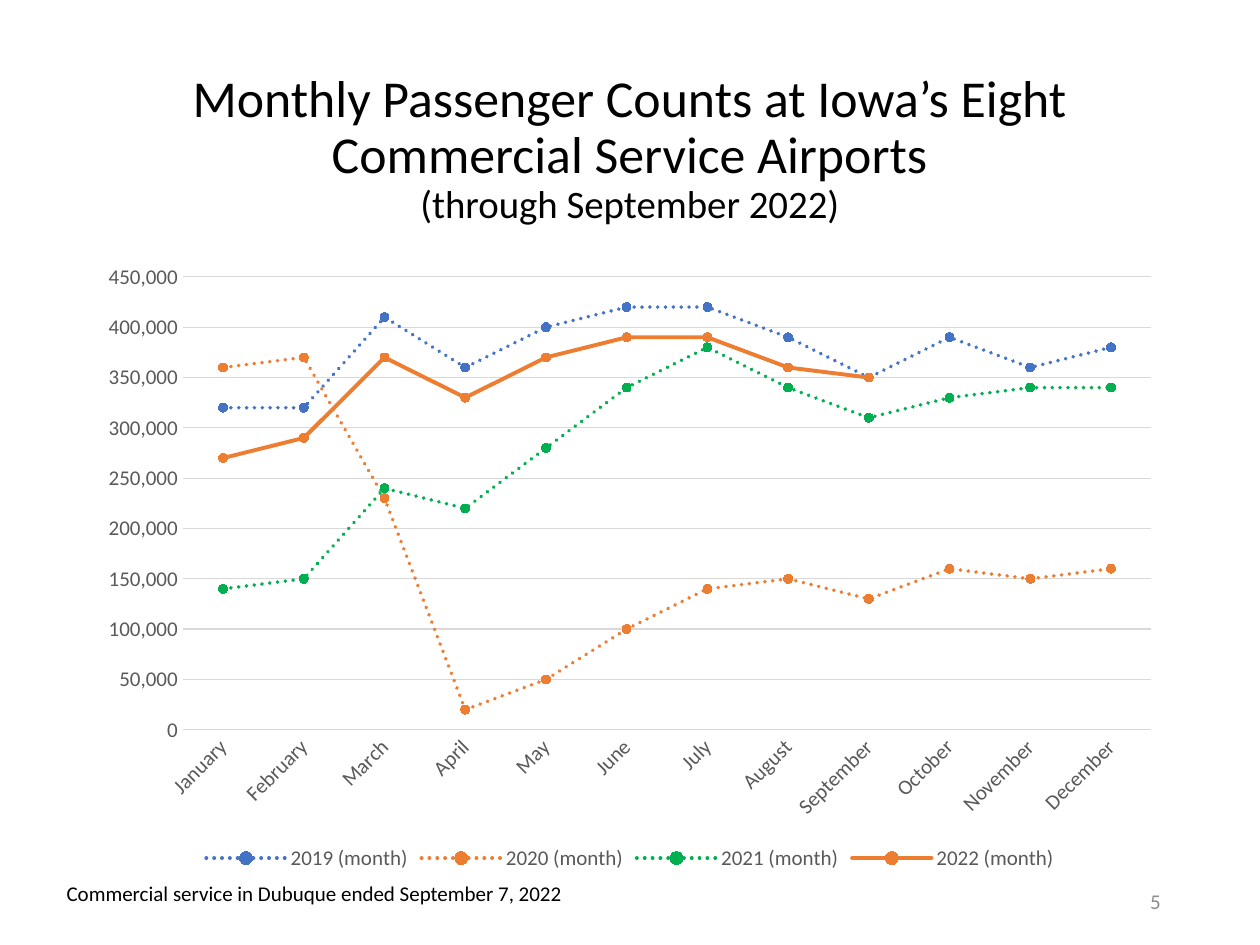
from dataclasses import dataclass
from typing import Optional

from pptx import Presentation
from pptx.chart.data import CategoryChartData
from pptx.dml.color import RGBColor
from pptx.enum.chart import XL_CHART_TYPE, XL_LEGEND_POSITION, XL_MARKER_STYLE, XL_TICK_MARK
from pptx.enum.dml import MSO_LINE
from pptx.enum.text import MSO_ANCHOR, PP_ALIGN
from pptx.oxml.ns import qn
from pptx.util import Inches, Pt


@dataclass(frozen=True)
class Theme:
    font: str = "Calibri"
    ink: str = "000000"
    label: str = "595959"
    grid: str = "D9D9D9"
    muted: str = "8C8C8C"
    blue: str = "4472C4"
    orange: str = "ED7D31"
    green: str = "00B050"
    title: float = 29.6
    sub: float = 22.2
    small: float = 12
    base: float = 10


@dataclass(frozen=True)
class Year:
    name: str
    color: str
    counts: tuple[Optional[int], ...]
    dotted: bool = True


@dataclass(frozen=True)
class Line:
    text: str
    size: float
    color: str


@dataclass(frozen=True)
class Note:
    box: tuple[float, float, float, float]
    lines: tuple[Line, ...]
    align: PP_ALIGN = PP_ALIGN.LEFT
    anchor: MSO_ANCHOR = MSO_ANCHOR.TOP
    spacing: float = 1.0


THEME = Theme()
UNIT = 10000
MONTHS = ("January", "February", "March", "April", "May", "June", "July",
          "August", "September", "October", "November", "December")
YEARS = (
    Year("2019 (month)", THEME.blue,
         (32, 32, 41, 36, 40, 42, 42, 39, 35, 39, 36, 38)),
    Year("2020 (month)", THEME.orange,
         (36, 37, 23, 2, 5, 10, 14, 15, 13, 16, 15, 16)),
    Year("2021 (month)", THEME.green,
         (14, 15, 24, 22, 28, 34, 38, 34, 31, 33, 34, 34)),
    Year("2022 (month)", THEME.orange,
         (27, 29, 37, 33, 37, 39, 39, 36, 35, None, None, None), False),
)
NOTES = (
    Note((7.06, 6.95, 2.25, 0.4), (Line("5", THEME.small, THEME.muted),),
         PP_ALIGN.RIGHT, MSO_ANCHOR.MIDDLE),
    Note((0.69, 0.4, 8.62, 1.45),
         (Line("Monthly Passenger Counts at Iowa’s Eight Commercial Service Airports",
               THEME.title, THEME.ink),
          Line("(through September 2022)", THEME.sub, THEME.ink)),
         PP_ALIGN.CENTER, MSO_ANCHOR.BOTTOM, 0.9),
    Note((0.43, 6.94, 7.02, 0.3),
         (Line("Commercial service in Dubuque ended September 7, 2022",
               THEME.small, THEME.ink),)),
)


def set_font(font, size: float, color: str) -> None:
    font.name = THEME.font
    font.size = Pt(size)
    font.color.rgb = RGBColor.from_string(color)


def set_line(line, color: str, width: float) -> None:
    line.color.rgb = RGBColor.from_string(color)
    line.width = Pt(width)


def add_note(slide, note: Note) -> None:
    frame = slide.shapes.add_textbox(*map(Inches, note.box)).text_frame
    frame.word_wrap = True
    frame.vertical_anchor = note.anchor
    frame.text = "\n".join(line.text for line in note.lines)
    for para, line in zip(frame.paragraphs, note.lines):
        para.alignment = note.align
        para.line_spacing = note.spacing
        set_font(para.runs[0].font, line.size, line.color)


def style_year(series, year: Year) -> None:
    series.smooth = False
    set_line(series.format.line, year.color, 2.25)
    if year.dotted:
        series.format.line.dash_style = MSO_LINE.ROUND_DOT
    series._element.find(f"{qn('c:spPr')}/{qn('a:ln')}").set("cap", "rnd")
    marker = series.marker
    marker.style = XL_MARKER_STYLE.CIRCLE
    marker.size = 5
    marker.format.fill.solid()
    marker.format.fill.fore_color.rgb = RGBColor.from_string(year.color)
    set_line(marker.format.line, year.color, 0.75)


def style_axes(chart) -> None:
    months, counts = chart.category_axis, chart.value_axis
    for axis in (months, counts):
        axis.major_tick_mark = axis.minor_tick_mark = XL_TICK_MARK.NONE
        set_font(axis.tick_labels.font, THEME.small, THEME.label)
    set_line(months.format.line, THEME.grid, 0.75)
    counts.format.line.fill.background()
    counts.minimum_scale, counts.maximum_scale = 0, 450000
    counts.major_unit = 50000
    counts.tick_labels.number_format = "#,##0"
    counts.tick_labels.number_format_is_linked = False
    set_line(counts.major_gridlines.format.line, THEME.grid, 0.75)


def add_counts(slide) -> None:
    data = CategoryChartData(number_format="#,##0")
    data.categories = MONTHS
    for year in YEARS:
        data.add_series(year.name, [None if n is None else n * UNIT for n in year.counts])
    box = map(Inches, (0.69, 2, 8.62, 4.95))
    chart = slide.shapes.add_chart(XL_CHART_TYPE.LINE_MARKERS, *box, data).chart
    chart.has_title = False
    set_font(chart.font, THEME.base, THEME.ink)
    chart.has_legend = True
    chart.legend.position = XL_LEGEND_POSITION.BOTTOM
    chart.legend.include_in_layout = False
    set_font(chart.legend.font, THEME.small, THEME.label)
    plot = chart.plots[0]
    plot.vary_by_categories = False
    for series, year in zip(plot.series, YEARS):
        style_year(series, year)
    style_axes(chart)


def main() -> None:
    deck = Presentation()
    deck.slide_width, deck.slide_height = Inches(10), Inches(7.5)
    slide = deck.slides.add_slide(deck.slide_layouts[6])
    add_counts(slide)
    for note in NOTES:
        add_note(slide, note)
    deck.save("out.pptx")


if __name__ == "__main__":
    main()
